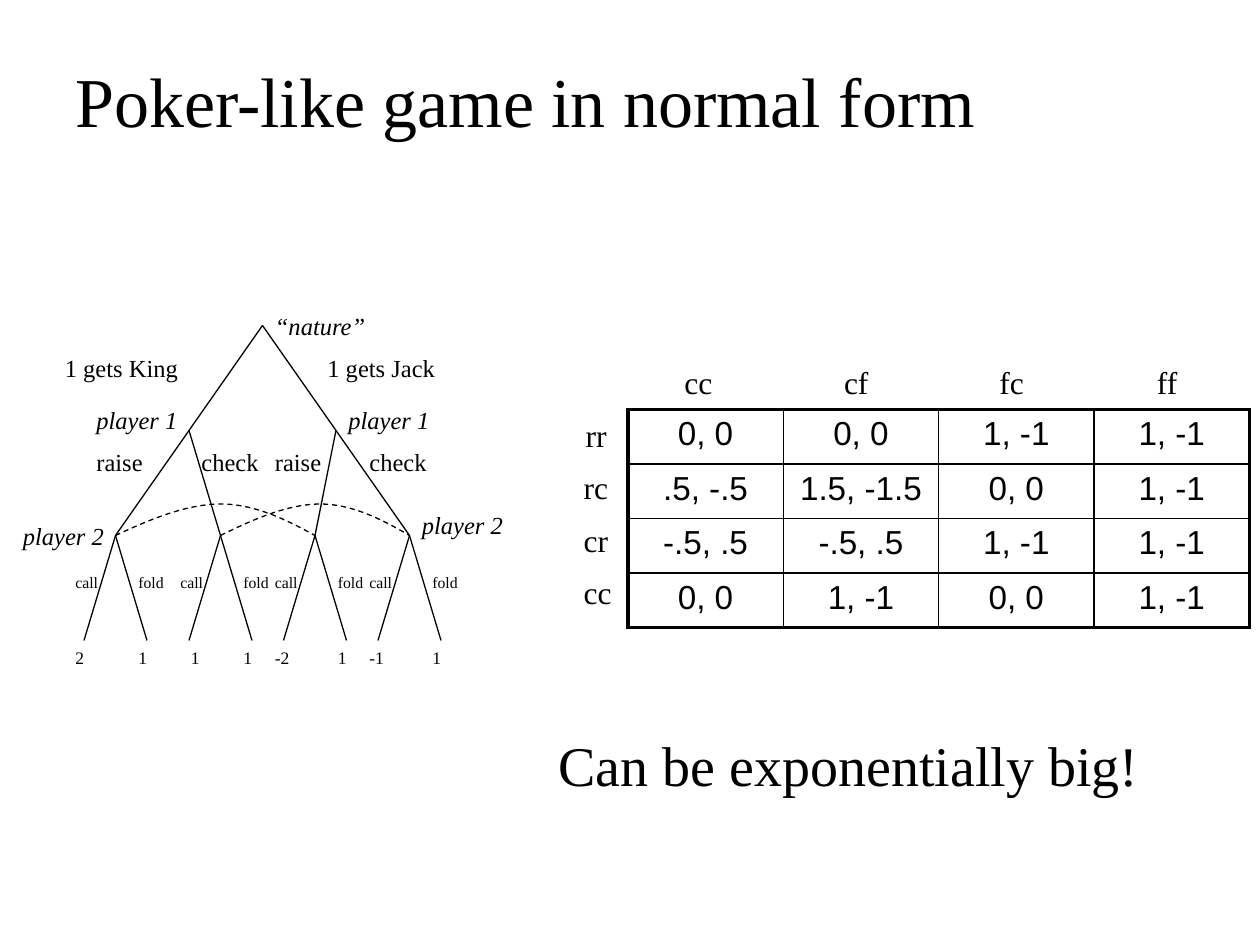
import dataclasses

import lxml.etree
import pptx
import pptx.dml.color
import pptx.enum.dml
import pptx.enum.shapes
import pptx.enum.text
import pptx.oxml.ns
import pptx.util

SCALE = 7620  # EMU per px, 120 px to the inch


@dataclasses.dataclass(frozen=True)
class Theme:
    ink: str = "000000"
    serif: str = "Times New Roman"
    sans: str = "Arial"
    title: int = 40
    remark: int = 32
    cell: int = 19
    strategy: int = 18
    move: int = 14
    payoff: int = 10
    reply: int = 9
    line: float = 0.75
    inner_border: float = 1
    outer_border: float = 2.25


THEME = Theme()

ROOT = (250, 310)
PLAYER_1 = [(180, 410), (320, 410)]
PLAYER_2 = [(110, 510), (210, 510), (300, 510), (390, 510)]
# Payoffs after call and fold, with the left offset of the call payoff
PAYOFFS = [("2", "1", -50), ("1", "1", -40), ("-2", "1", -50), ("-1", "1", -50)]

MOVES = [
    ("1 gets King", 50, 330, 170), ("1 gets Jack", 300, 330, 180),
    ("raise", 80, 420, 80), ("raise", 250, 420, 80),
    ("check", 180, 420, 90), ("check", 340, 420, 90),
]
PLAYERS = [
    ("“nature”", 250, 290), ("player 1", 320, 380), ("player 1", 80, 380),
    ("player 2", 10, 490), ("player 2", 390, 480),
]

# Strategies with the left edge of each label
COLUMN_STRATEGIES = [("cc", 640), ("cf", 792), ("fc", 940), ("ff", 1090)]
ROW_STRATEGIES = [("rr", 546), ("rc", 544), ("cr", 544), ("cc", 544)]
GAME = [
    ["0, 0", "0, 0", "1, -1", "1, -1"],
    [".5, -.5", "1.5, -1.5", "0, 0", "1, -1"],
    ["-.5, .5", "-.5, .5", "1, -1", "1, -1"],
    ["0, 0", "1, -1", "0, 0", "1, -1"],
]


def px(n):
    return pptx.util.Emu(round(n * SCALE))


def ink():
    return pptx.dml.color.RGBColor.from_string(THEME.ink)


def style_text(p, size, font, italic=False):
    for r in p.runs:
        r.font.size = pptx.util.Pt(size)
        r.font.name = font
        r.font.italic = italic
        r.font.color.rgb = ink()


def style_line(line):
    line.color.rgb = ink()
    line.width = pptx.util.Pt(THEME.line)


def add_label(slide, text, x, y, w, h, size, italic=False, wrap=True):
    sp = slide.shapes.add_textbox(px(x), px(y), px(w), px(h))
    tf = sp.text_frame
    tf.text = text
    tf.word_wrap = wrap
    tf.auto_size = pptx.enum.text.MSO_AUTO_SIZE.SHAPE_TO_FIT_TEXT
    style_text(tf.paragraphs[0], size, THEME.serif, italic)
    return sp


def add_title(slide, text):
    sp = add_label(slide, text, 60, 50, 1080, 90, THEME.title)
    sp.text_frame.auto_size = pptx.enum.text.MSO_AUTO_SIZE.NONE
    sp.text_frame.vertical_anchor = pptx.enum.text.MSO_ANCHOR.MIDDLE


def add_branch(slide, start, end):
    cxn = slide.shapes.add_connector(
        pptx.enum.shapes.MSO_CONNECTOR.STRAIGHT, *map(px, start + end))
    style_line(cxn.line)
    lxml.etree.SubElement(cxn._element.spPr, pptx.oxml.ns.qn("a:effectLst"))


def add_information_set(slide, start, end):
    """Join two nodes by a dashed arc of two cubic curves."""
    (x, y), span = start, end[0] - start[0]
    steps = [(0.18, 16), (0.36, 30), (0.53, 30), (0.69, 30), (0.85, 16), (1, 0)]
    points = [(px(x + span * along), px(y - rise)) for along, rise in steps]
    builder = slide.shapes.build_freeform(px(x), px(y))
    builder.add_line_segments(points, close=False)
    sp = builder.convert_to_shape()
    sp.shadow.inherit = False
    sp.fill.background()
    style_line(sp.line)
    sp.line.dash_style = pptx.enum.dml.MSO_LINE.DASH

    # Each run of three points becomes one curve
    qn = pptx.oxml.ns.qn
    segments = list(sp._element.iter(qn("a:lnTo")))
    for i in range(0, len(segments), 3):
        curve = lxml.etree.SubElement(segments[i].getparent(), qn("a:cubicBezTo"))
        for segment in segments[i:i + 3]:
            curve.append(segment[0])
            segment.getparent().remove(segment)


def add_game_tree(slide):
    for i, player in enumerate(PLAYER_1):
        add_branch(slide, ROOT, player)
        for node in PLAYER_2[2 * i:2 * i + 2]:
            add_branch(slide, player, node)
    for (x, y), (called, folded, offset) in zip(PLAYER_2, PAYOFFS):
        for leaf in (x - 30, x + 30):
            add_branch(slide, (x, y), (leaf, y + 100))
        add_label(slide, "call", x - 50, y + 30, 60, 30, THEME.reply)
        add_label(slide, "fold", x + 10, y + 30, 70, 30, THEME.reply)
        add_label(slide, called, x + offset, y + 100, 40, 32, THEME.payoff)
        add_label(slide, folded, x + 10, y + 100, 30, 32, THEME.payoff)
    for start, end in zip(PLAYER_2, PLAYER_2[2:]):
        add_information_set(slide, start, end)
    for text, x, y, w in MOVES:
        add_label(slide, text, x, y, w, 41, THEME.move)
    for text, x, y in PLAYERS:
        add_label(slide, text, x, y, 120, 41, THEME.move, italic=True)


def set_borders(cell, outer_sides):
    qn = pptx.oxml.ns.qn
    tcPr = cell._tc.get_or_add_tcPr()
    for side in "LRTB":
        width = THEME.outer_border if side in outer_sides else THEME.inner_border
        ln = lxml.etree.SubElement(
            tcPr, qn("a:ln" + side), w=str(pptx.util.Pt(width)))
        fill = lxml.etree.SubElement(ln, qn("a:solidFill"))
        lxml.etree.SubElement(fill, qn("a:srgbClr"), val=THEME.ink)


def add_game_table(slide, x, y, col_w, row_h):
    rows, cols = len(GAME), len(GAME[0])
    table = slide.shapes.add_table(
        rows, cols, px(x), px(y), px(cols * col_w), px(rows * row_h)).table
    table.first_row = table.horz_banding = False
    for i, row in enumerate(GAME):
        for j, value in enumerate(row):
            cell = table.cell(i, j)
            edges = {"L": j == 0, "R": j == cols - 1, "T": i == 0, "B": i == rows - 1}
            set_borders(cell, [side for side, outer in edges.items() if outer])
            cell.fill.background()
            p = cell.text_frame.paragraphs[0]
            p.text = value
            p.alignment = pptx.enum.text.PP_ALIGN.CENTER
            style_text(p, THEME.cell, THEME.sans)


def add_strategy_labels(slide):
    columns = [(text, x, 340) for text, x in COLUMN_STRATEGIES]
    rows = [(text, x, 390 + 50 * i) for i, (text, x) in enumerate(ROW_STRATEGIES)]
    for text, x, y in columns + rows:
        add_label(slide, text, x, y, 56, 48, THEME.strategy)


def main():
    prs = pptx.Presentation()
    prs.slide_width, prs.slide_height = px(1200), px(900)
    slide = prs.slides.add_slide(prs.slide_layouts[6])
    add_title(slide, "Poker-like game in normal form")
    add_game_tree(slide)
    add_game_table(slide, 598, 390, 148, 52)
    add_strategy_labels(slide)
    add_label(slide, "Can be exponentially big!", 520, 690, 582, 77,
              THEME.remark, wrap=False)
    prs.save("out.pptx")


if __name__ == "__main__":
    main()
